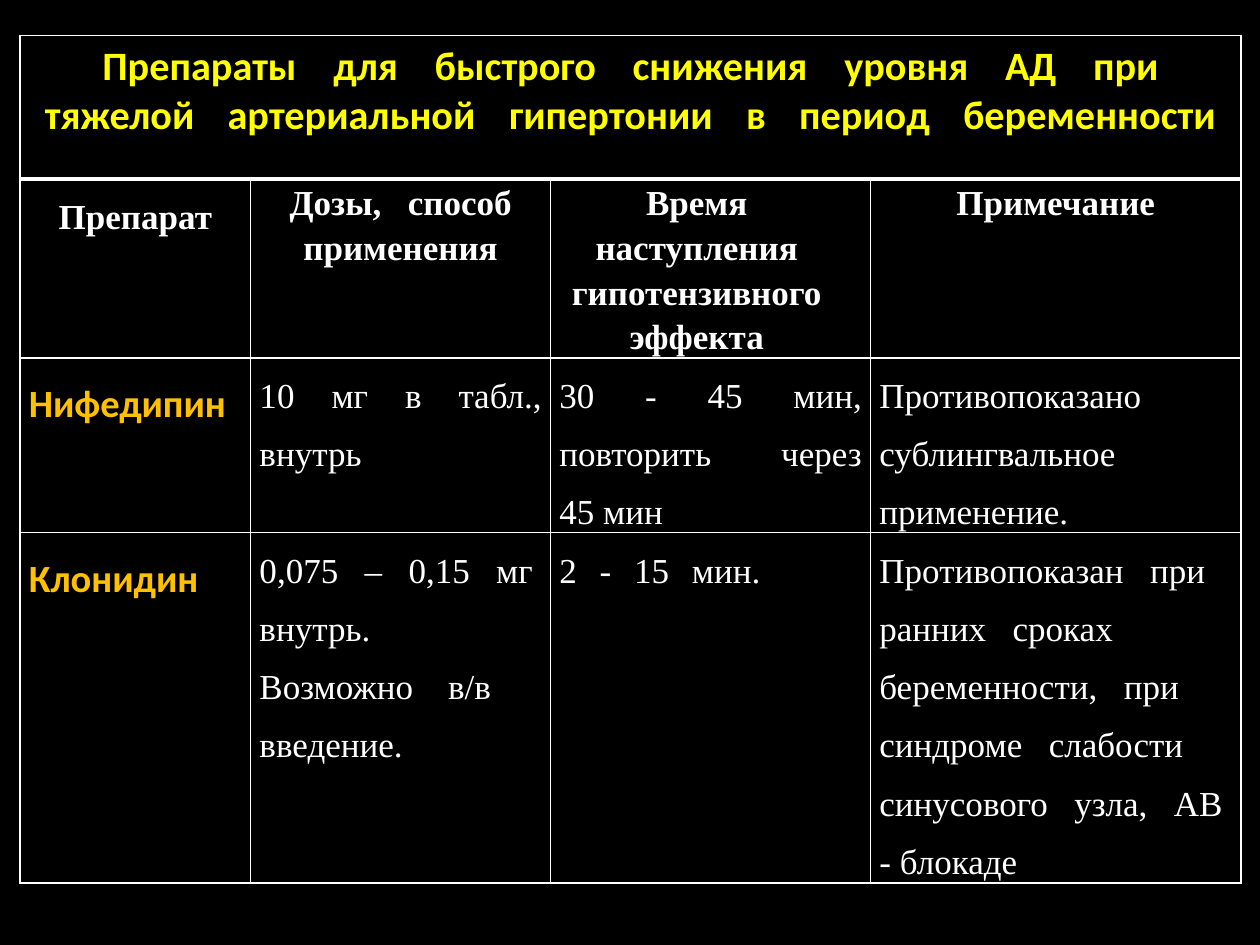
from lxml import etree
from pptx import Presentation
from pptx.dml.color import RGBColor
from pptx.enum.text import PP_ALIGN
from pptx.oxml.ns import qn
from pptx.util import Inches, Pt

CENTER, JUSTIFY, LEFT = PP_ALIGN.CENTER, PP_ALIGN.JUSTIFY, PP_ALIGN.LEFT
BLACK = RGBColor(0x00, 0x00, 0x00)
WHITE = RGBColor(0xFF, 0xFF, 0xFF)
YELLOW = RGBColor(0xFF, 0xFF, 0x00)
AMBER = RGBColor(0xFF, 0xC0, 0x00)
SERIF, SANS = "Times New Roman", "Calibri"

COL_WIDTHS = [1.83, 2.38, 2.54, 2.94]
ROW_HEIGHTS = [1.14, 1.42, 1.38, 2.78]

# Each cell is a list of lines: (text, extra points between words)
TITLE = [("Препараты для быстрого снижения уровня АД при", 15.6),
         ("тяжелой артериальной гипертонии в период беременности", 13.6)]
HEADERS = [
    [("Препарат", 0)],
    [("Дозы, способ", 10), ("применения", 0)],
    [("Время", 0), ("наступления", 0), ("гипотензивного", 0), ("эффекта", 0)],
    [("Примечание", 0)],
]
DRUGS = [
    (JUSTIFY, [
        [("Нифедипин", 0)],
        [("10 мг в табл.,", 12), ("внутрь", 0)],
        [("30 - 45 мин,", 14), ("повторить через", 19), ("45 мин", 0)],
        [("Противопоказано", 0), ("сублингвальное", 0), ("применение.", 0)],
    ]),
    (LEFT, [
        [("Клонидин", 0)],
        [("0,075 – 0,15 мг", 10), ("внутрь.", 0), ("Возможно в/в", 15),
         ("введение.", 0)],
        [("2 - 15 мин.", 8)],
        [("Противопоказан при", 10), ("ранних сроках", 10),
         ("беременности, при", 10), ("синдроме слабости", 10),
         ("синусового узла, АВ", 10), ("- блокаде", 0)],
    ]),
]


def set_borders(cell, top=1, bottom=1):
    """Draw white lines of the given point widths around a cell."""
    tc_pr = cell._tc.get_or_add_tcPr()
    for side, width in (("L", 1), ("R", 1), ("T", top), ("B", bottom)):
        ln = etree.SubElement(tc_pr, qn(f"a:ln{side}"), w=str(Pt(width)))
        fill = etree.SubElement(ln, qn("a:solidFill"))
        etree.SubElement(fill, qn("a:srgbClr"), val=str(WHITE))


def add_line(p, text, gap):
    """Add one line, widening its word spaces by gap points."""
    if not gap:
        p.add_run().text = text
        return
    for i, word in enumerate(text.split(" ")):
        if i:
            r = p.add_run()
            r.text = " "
            r.font._element.set("spc", str(round(gap * 100)))
        p.add_run().text = word


def write_cell(cell, lines, size, font=SERIF, color=WHITE, bold=False,
               align=CENTER, spacing=1.0):
    p = cell.text_frame.paragraphs[0]
    p.alignment = align
    p.line_spacing = spacing
    for i, (text, gap) in enumerate(lines):
        if i:
            p.add_line_break()
        add_line(p, text, gap)
    for r in p.runs:
        r.font.size, r.font.name, r.font.bold = Pt(size), font, bold
        r.font.color.rgb = color


def add_drug_table(slide, left, top):
    table = slide.shapes.add_table(
        len(ROW_HEIGHTS), len(COL_WIDTHS), Inches(left), Inches(top),
        Inches(sum(COL_WIDTHS)), Inches(sum(ROW_HEIGHTS))).table
    for column, width in zip(table.columns, COL_WIDTHS):
        column.width = Inches(width)

    # Grid, fills and margins
    for i, (row, height) in enumerate(zip(table.rows, ROW_HEIGHTS)):
        row.height = Inches(height)
        for cell in row.cells:
            set_borders(cell, top=3 if i == 1 else 1, bottom=3 if i == 0 else 1)
            cell.fill.solid()
            cell.fill.fore_color.rgb = BLACK
            if i > 0:
                cell.margin_left = cell.margin_right = Inches(0.07)
                cell.margin_top = cell.margin_bottom = 0

    # Title row
    table.cell(0, 0).merge(table.cell(0, len(COL_WIDTHS) - 1))
    write_cell(table.cell(0, 0), TITLE, 23, SANS, YELLOW, bold=True)

    # Column headers; the third sits slightly left of centre
    for j, lines in enumerate(HEADERS):
        write_cell(table.cell(1, j), lines, 20, bold=True,
                   spacing=1.5 if j == 0 else 1.15)
    table.cell(1, 2).margin_right = Inches(0.29)

    # One row per drug
    for i, (align, (name, *details)) in enumerate(DRUGS, start=2):
        write_cell(table.cell(i, 0), name, 22, SANS, AMBER, True, align, 1.5)
        for j, lines in enumerate(details, start=1):
            write_cell(table.cell(i, j), lines, 20, align=align, spacing=1.5)


def main():
    prs = Presentation()
    prs.slide_width, prs.slide_height = Inches(10), Inches(7.5)
    slide = prs.slides.add_slide(prs.slide_layouts[6])
    slide.background.fill.solid()
    slide.background.fill.fore_color.rgb = BLACK
    add_drug_table(slide, 0.16, 0.28)
    prs.save("out.pptx")


if __name__ == "__main__":
    main()
